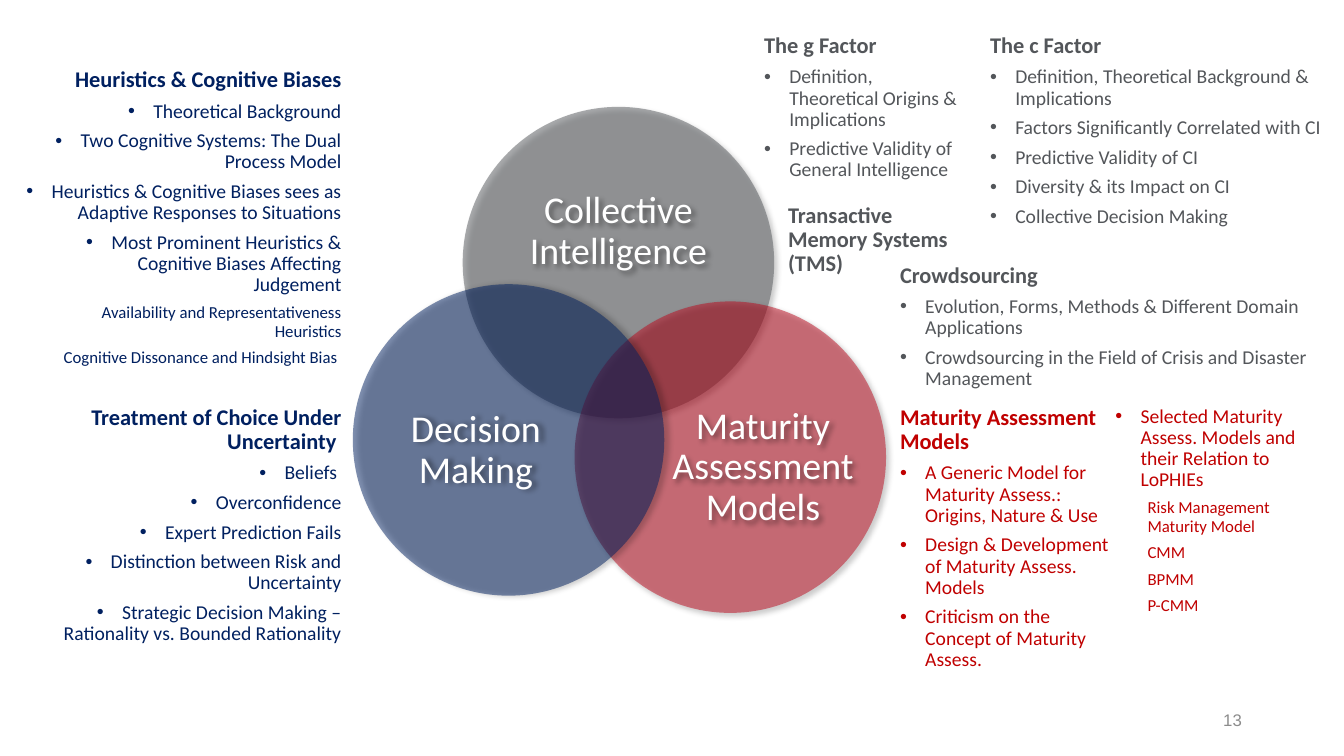
from lxml.etree import SubElement
from pptx import Presentation
from pptx.dml.color import RGBColor
from pptx.enum.shapes import MSO_SHAPE
from pptx.enum.text import MSO_ANCHOR, MSO_AUTO_SIZE, PP_ALIGN
from pptx.oxml.ns import qn
from pptx.util import Pt

NAVY = RGBColor(0x00, 0x20, 0x60)
GREY = RGBColor(0x53, 0x56, 0x5A)
CRIMSON = RGBColor(0xBD, 0x08, 0x1C)
RED = RGBColor(0xC0, 0x00, 0x00)
WHITE = RGBColor(0xFF, 0xFF, 0xFF)
PALE = RGBColor(0x8C, 0x8C, 0x8C)

# Paragraph levels
HEAD = {"size": 16, "bold": True, "margin": 0, "indent": 0}
ITEM = {"size": 14, "bold": False, "margin": 18, "indent": -18}
SUB = {"size": 12, "bold": False, "margin": 9, "indent": 0}
DEEP_SUB = {**SUB, "margin": 23}
LABEL = {**HEAD, "size": 27, "bold": False}
NUMBER = {**LABEL, "size": 12}

DIAMETER = 222.5
COMPARISON_LAYOUT = 3 + 1


class SlideBuilder:
    """Holds the text style, the current slide and its free placeholders."""

    def __init__(self, deck, font="Calibri", line_spacing=0.9, gap=6):
        self.font, self.line_spacing, self.gap = font, line_spacing, gap
        self.slide = deck.slides.add_slide(deck.slide_layouts[COMPARISON_LAYOUT])
        title = self.slide.shapes.title
        self.bodies = [page for page in self.slide.placeholders
                       if page.placeholder_format.idx != 0]
        title.element.getparent().remove(title.element)

    def paragraph(self, para, text, level, color, align, first, font=None):
        formats = {"alignment": align, "line_spacing": self.line_spacing,
                   "space_before": Pt(0 if first else self.gap)}
        for name, value in formats.items():
            setattr(para, name, value)
        properties = para._p.get_or_add_pPr()
        properties.set("marL", str(Pt(level["margin"])))
        properties.set("indent", str(Pt(level["indent"])))
        if level is ITEM:
            SubElement(properties, qn("a:buFont")).set("typeface", "Arial")
            SubElement(properties, qn("a:buChar")).set("char", "•")
        else:
            SubElement(properties, qn("a:buNone"))
        span = para.add_run()
        span.text = text
        formats = {"name": font or self.font, "size": Pt(level["size"]),
                   "bold": level["bold"]}
        for name, value in formats.items():
            setattr(span.font, name, value)
        span.font.color.rgb = color

    def fill_text(self, box, lines, color, align, anchor, font=None):
        frame = box.text_frame
        formats = {"word_wrap": True, "auto_size": MSO_AUTO_SIZE.NONE,
                   "vertical_anchor": anchor}
        for name, value in formats.items():
            setattr(frame, name, value)
        for index, (level, text) in enumerate(lines):
            para = frame.add_paragraph() if index else frame.paragraphs[0]
            self.paragraph(para, text, level, color, align, index == 0, font)

    def text(self, place, lines, color, align=PP_ALIGN.LEFT,
             anchor=MSO_ANCHOR.TOP, font=None):
        box = self.slide.shapes.add_textbox(*map(Pt, place))
        self.fill_text(box, lines, color, align, anchor, font)
        return box

    def topic(self, place, lines, color, align=PP_ALIGN.LEFT, columns=1):
        """A headed list, in a body placeholder while any is free."""
        if self.bodies:
            box = self.bodies.pop(0)
            for name, value in zip(("left", "top", "width", "height"), place):
                setattr(box, name, Pt(value))
            self.fill_text(box, lines, color, align, MSO_ANCHOR.TOP)
        else:
            box = self.text(place, lines, color, align)
        if columns > 1:
            box.text_frame._txBody.bodyPr.set("numCol", str(columns))

    def shadow(self, shape, angle):
        effects = SubElement(shape.element.spPr, qn("a:effectLst"))
        outer = SubElement(effects, qn("a:outerShdw"), blurRad=str(Pt(4)),
                           dist=str(Pt(3)), dir=str(angle * 60000), rotWithShape="0")
        tint = SubElement(outer, qn("a:srgbClr"), val="000000")
        SubElement(tint, qn("a:alpha"), val="40000")

    def circle(self, left, top, color, angle):
        place = (left, top, DIAMETER, DIAMETER)
        disc = self.slide.shapes.add_shape(MSO_SHAPE.OVAL, *map(Pt, place))
        disc.fill.solid()
        disc.fill.fore_color.rgb = color
        tint = disc.element.spPr.find(qn("a:solidFill"))[0]
        SubElement(tint, qn("a:alpha"), val="50000")
        disc.line.fill.background()
        self.shadow(disc, angle)

    def label(self, left, top, text, margins, angle):
        box = self.text((left, top, DIAMETER, DIAMETER), [(LABEL, text)], WHITE,
                        PP_ALIGN.CENTER, MSO_ANCHOR.MIDDLE)
        for side, value in zip(("left", "top", "right", "bottom"), margins):
            setattr(box.text_frame, f"margin_{side}", Pt(value))
        self.shadow(box, angle)


def main():
    deck = Presentation()
    deck.slide_width, deck.slide_height = Pt(960), Pt(540)
    page = SlideBuilder(deck)

    # Overlapping circles, then their labels
    circles = [
        (330.5, 76.3, GREY, 45, "Collective Intelligence", (29.5, 39, 29.5, 83.5)),
        (410.4, 215.3, CRIMSON, 45, "Maturity Assessment Models", (67.7, 57.6, 21, 42.5)),
        (252, 203, NAVY, 0, "Decision Making", (21, 57.6, 67.7, 42.5)),
    ]
    for left, top, color, angle, _, _ in circles:
        page.circle(left, top, color, angle)
    for left, top, _, angle, text, margins in circles:
        page.label(left, top, text, margins, angle)

    # Decision making topics
    page.topic((8.6, 45.4, 242.6, 237), [
        (HEAD, "Heuristics & Cognitive Biases"),
        (ITEM, "Theoretical Background"),
        (ITEM, "Two Cognitive Systems: The Dual Process Model"),
        (ITEM, "Heuristics & Cognitive Biases sees as Adaptive Responses to Situations"),
        (ITEM, "Most Prominent Heuristics & Cognitive Biases Affecting Judgement"),
        (SUB, "Availability and Representativeness Heuristics"),
        (SUB, "Cognitive Dissonance and Hindsight Bias "),
    ], NAVY, PP_ALIGN.RIGHT)
    page.topic((8.6, 286.6, 242.6, 195), [
        (HEAD, "Treatment of Choice Under Uncertainty "),
        (ITEM, "Beliefs "),
        (ITEM, "Overconfidence"),
        (ITEM, "Expert Prediction Fails"),
        (ITEM, "Distinction between Risk and Uncertainty"),
        (ITEM, "Strategic Decision Making – Rationality vs. Bounded Rationality"),
    ], NAVY, PP_ALIGN.RIGHT)

    # Collective intelligence topics
    page.topic((538.6, 20.9, 152.6, 147), [
        (HEAD, "The g Factor"),
        (ITEM, "Definition, Theoretical Origins & Implications"),
        (ITEM, "Predictive Validity of General Intelligence"),
    ], GREY)
    page.topic((700, 20.9, 268.6, 147), [
        (HEAD, "The c Factor"),
        (ITEM, "Definition, Theoretical Background & Implications"),
        (ITEM, "Factors Significantly Correlated with CI"),
        (ITEM, "Predictive Validity of CI"),
        (ITEM, "Diversity & its Impact on CI"),
        (ITEM, "Collective Decision Making"),
    ], GREY)
    page.text((555.8, 142, 135.4, 42),
              [(HEAD, "Transactive Memory Systems (TMS)")], GREY)
    page.topic((635.8, 185, 321.8, 104), [
        (HEAD, "Crowdsourcing"),
        (ITEM, "Evolution, Forms, Methods & Different Domain Applications"),
        (ITEM, "Crowdsourcing in the Field of Crisis and Disaster Management"),
    ], GREY)

    # Maturity assessment topics
    page.topic((635.8, 286.6, 321.8, 199.4), [
        (HEAD, "Maturity Assessment Models"),
        (ITEM, "A Generic Model for Maturity Assess.: Origins, Nature & Use"),
        (ITEM, "Design & Development of Maturity Assess. Models"),
        (ITEM, "Criticism on the Concept of Maturity Assess."),
        (ITEM, "Selected Maturity Assess. Models and their Relation to LoPHIEs"),
        (DEEP_SUB, "Risk Management Maturity Model"),
        (DEEP_SUB, "CMM"),
        (DEEP_SUB, "BPMM"),
        (DEEP_SUB, "P-CMM"),
    ], RED, columns=2)

    # Page number
    page.text((818.6, 500.4, 75.6, 28.8), [(NUMBER, "13")], PALE,
              PP_ALIGN.RIGHT, MSO_ANCHOR.MIDDLE, "Arial")

    deck.save("out.pptx")


if __name__ == "__main__":
    main()
